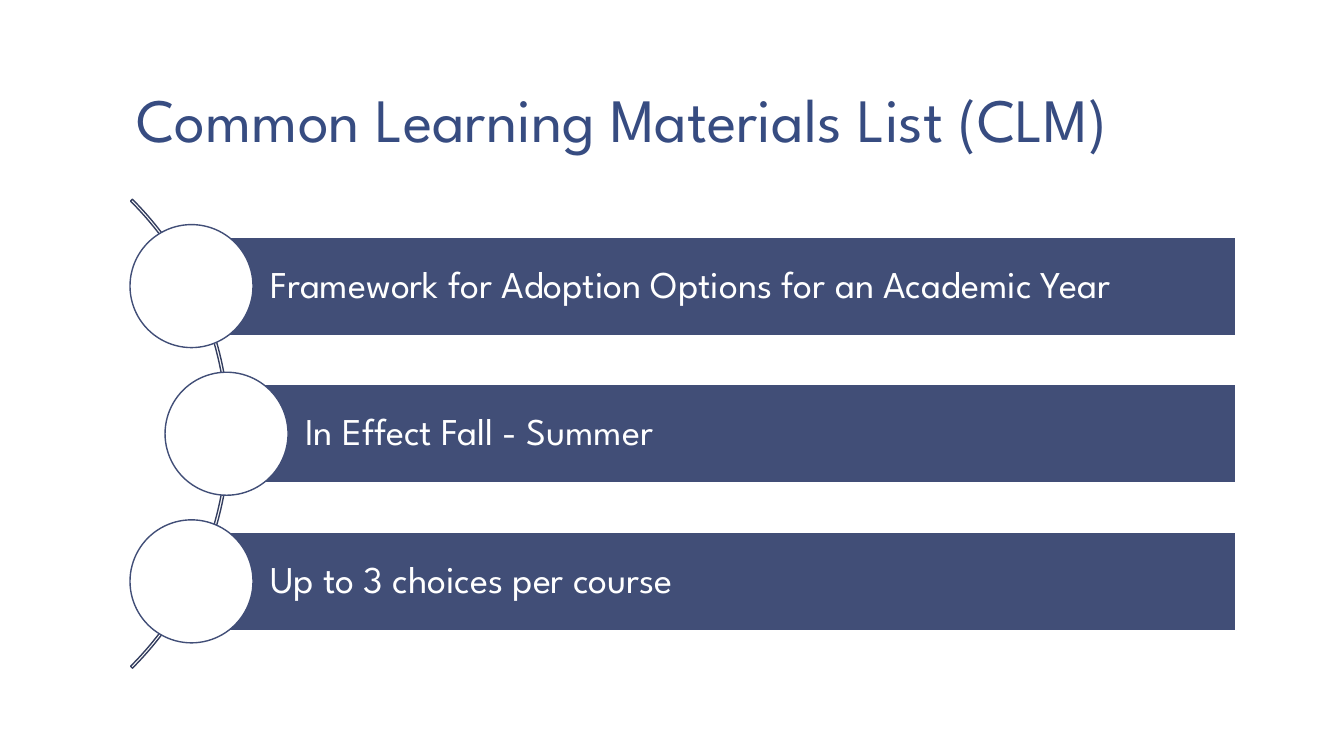
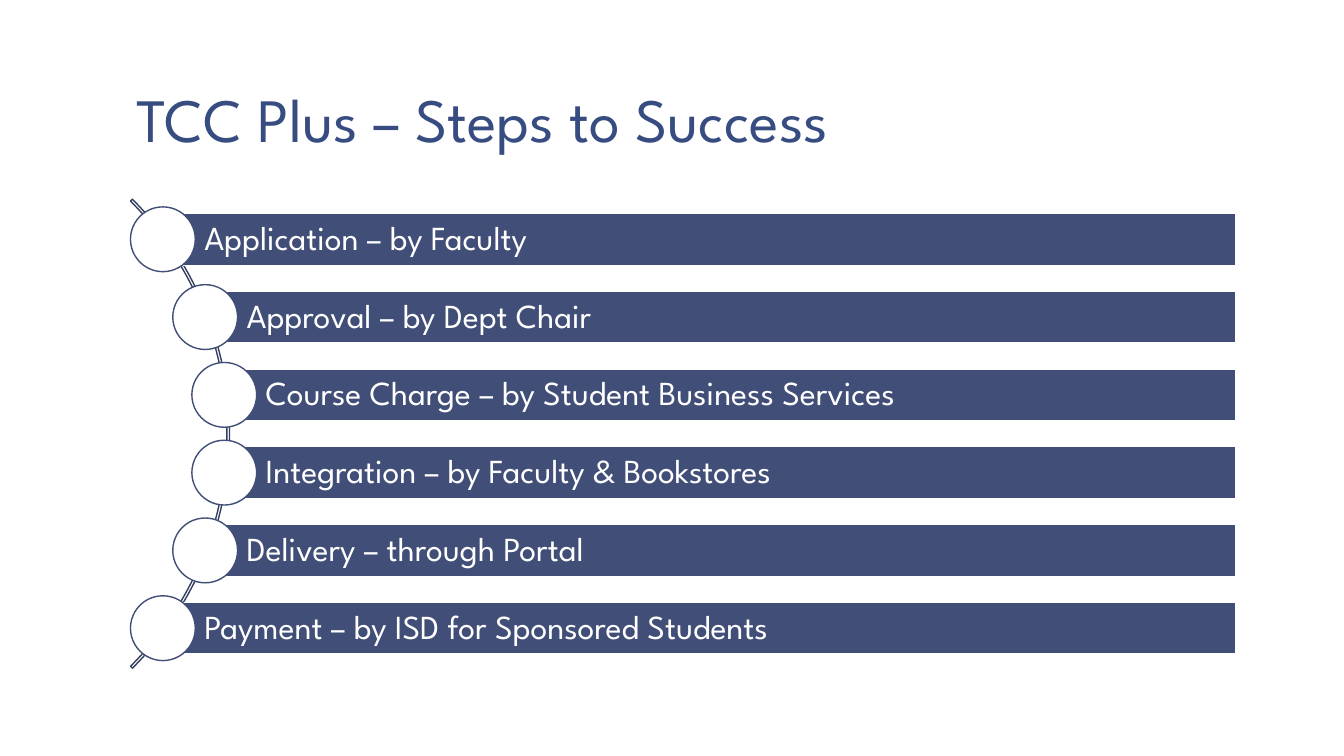
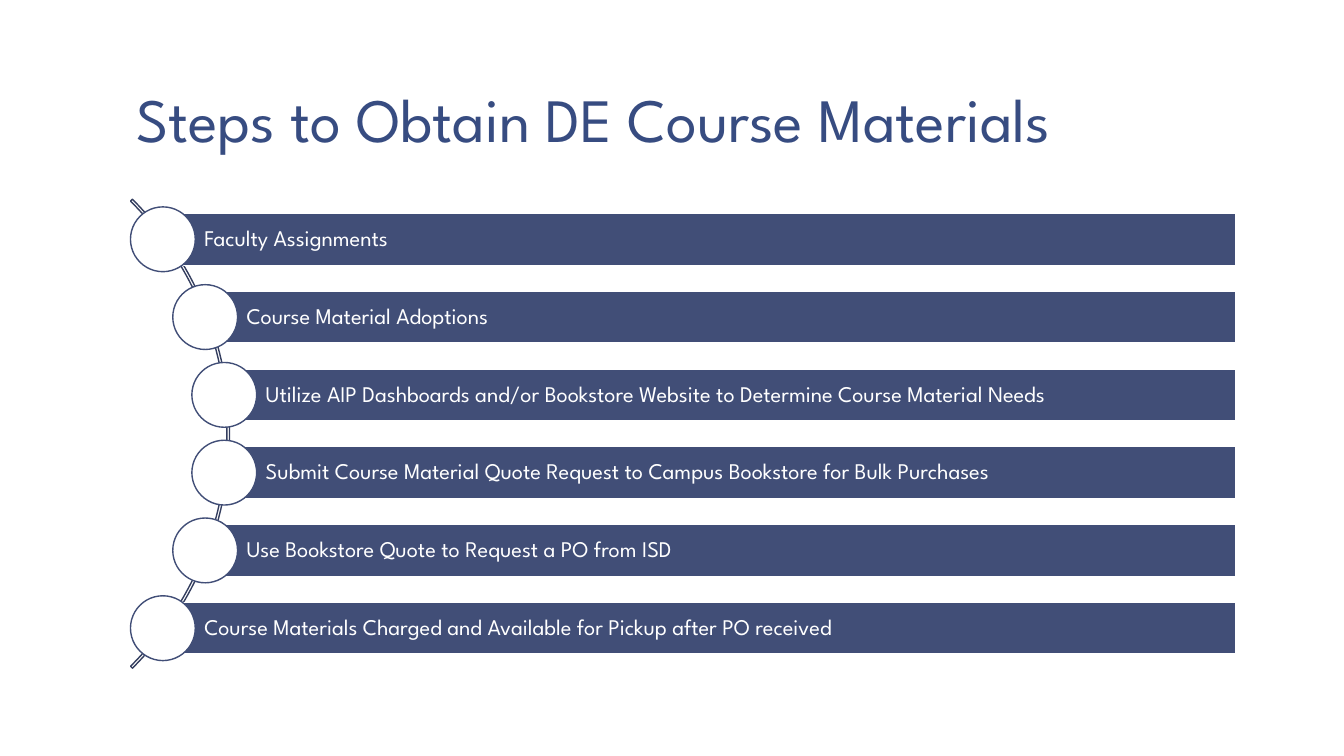
import math
from pptx import Presentation
from pptx.dml.color import RGBColor
from pptx.enum.shapes import MSO_SHAPE
from pptx.enum.text import MSO_ANCHOR, PP_ALIGN
from pptx.util import Cm, Pt

RECT = MSO_SHAPE.RECTANGLE
OVAL = MSO_SHAPE.OVAL
ARC = MSO_SHAPE.BLOCK_ARC
BOTTOM = MSO_ANCHOR.BOTTOM
MIDDLE = MSO_ANCHOR.MIDDLE
LEFT = PP_ALIGN.LEFT

FONT = "League Spartan"
WHITE = RGBColor(0xFF, 0xFF, 0xFF)
TITLE_BLUE = RGBColor(0x37, 0x4C, 0x81)
BAND_BLUE = RGBColor(0x41, 0x4E, 0x77)
ARC_BLUE = RGBColor(0x34, 0x3E, 0x5F)

ARC_SIZE = 16.71
ARC_X, ARC_Y = -2.57, 10.93
CIRCLE_PATH = 8.28
BAND_RIGHT = 31.15

SLIDES = [
    ("Common Learning Materials List (CLM)", 3.72, 27, 0.18, [
        "Framework for Adoption Options for an Academic Year",
        "In Effect Fall - Summer",
        "Up to 3 choices per course",
    ]),
    ("TCC Plus – Steps to Success", 1.96, 24, 0.18, [
        "Application – by Faculty",
        "Approval – by Dept Chair",
        "Course Charge – by Student Business Services",
        "Integration – by Faculty & Bookstores",
        "Delivery – through Portal",
        "Payment – by ISD for Sponsored Students",
    ]),
    ("Steps to Obtain DE Course Materials", 1.96, 16, 0.1, [
        "Faculty Assignments",
        "Course Material Adoptions",
        "Utilize AIP Dashboards and/or Bookstore Website to Determine Course Material Needs",
        "Submit Course Material Quote Request to Campus Bookstore for Bulk Purchases",
        "Use Bookstore Quote to Request a PO from ISD",
        "Course Materials Charged and Available for Pickup after PO received",
    ]),
]


def add_shape(s, kind, x, y, w, h, fill, line):
    sp = s.shapes.add_shape(kind, Cm(x), Cm(y), Cm(w), Cm(h))
    sp.shadow.inherit = False
    if fill is None:
        sp.fill.background()
    else:
        sp.fill.solid()
        sp.fill.fore_color.rgb = fill
    sp.line.color.rgb = line
    sp.line.width = Pt(1)
    return sp


def set_text(sp, text, size, color, spacing, anchor, left, right, top):
    tf = sp.text_frame
    tf.word_wrap = True
    tf.vertical_anchor = anchor
    tf.margin_left, tf.margin_right = Cm(left), Cm(right)
    tf.margin_top = tf.margin_bottom = Cm(top)
    p = tf.paragraphs[0]
    p.text = text
    p.alignment = LEFT
    p.line_spacing = spacing
    p.font.name = FONT
    p.font.size = Pt(size)
    p.font.color.rgb = color


prs = Presentation()
prs.slide_width = Cm(33.87)
prs.slide_height = Cm(19.05)

for title, pitch, size, margin, items in SLIDES:
    s = prs.slides.add_slide(prs.slide_layouts[6])
    sp = s.shapes.add_textbox(Cm(3.1), Cm(0.2), Cm(28.22), Cm(3.89))
    set_text(sp, title, 44, TITLE_BLUE, 0.85, BOTTOM, 0.33, 0.33, 0.18)

    arc = add_shape(s, ARC, ARC_X - ARC_SIZE / 2, ARC_Y - ARC_SIZE / 2,
                    ARC_SIZE, ARC_SIZE, None, ARC_BLUE)
    arc.adjustments[0] = 189
    arc.adjustments[1] = 27
    arc.adjustments[2] = 0.004

    circle = pitch * 5 / 6
    band = circle * 0.8
    for i, item in enumerate(items):
        dy = (i - (len(items) - 1) / 2) * pitch
        x = ARC_X + math.sqrt(CIRCLE_PATH ** 2 - dy ** 2)
        y = ARC_Y + dy
        sp = add_shape(s, RECT, x, y - band / 2, BAND_RIGHT - x, band, BAND_BLUE, WHITE)
        set_text(sp, item, size, WHITE, 0.9, MIDDLE, band * 0.8, margin, margin)
        add_shape(s, OVAL, x - circle / 2, y - circle / 2, circle, circle, WHITE, BAND_BLUE)

prs.save("out.pptx")
